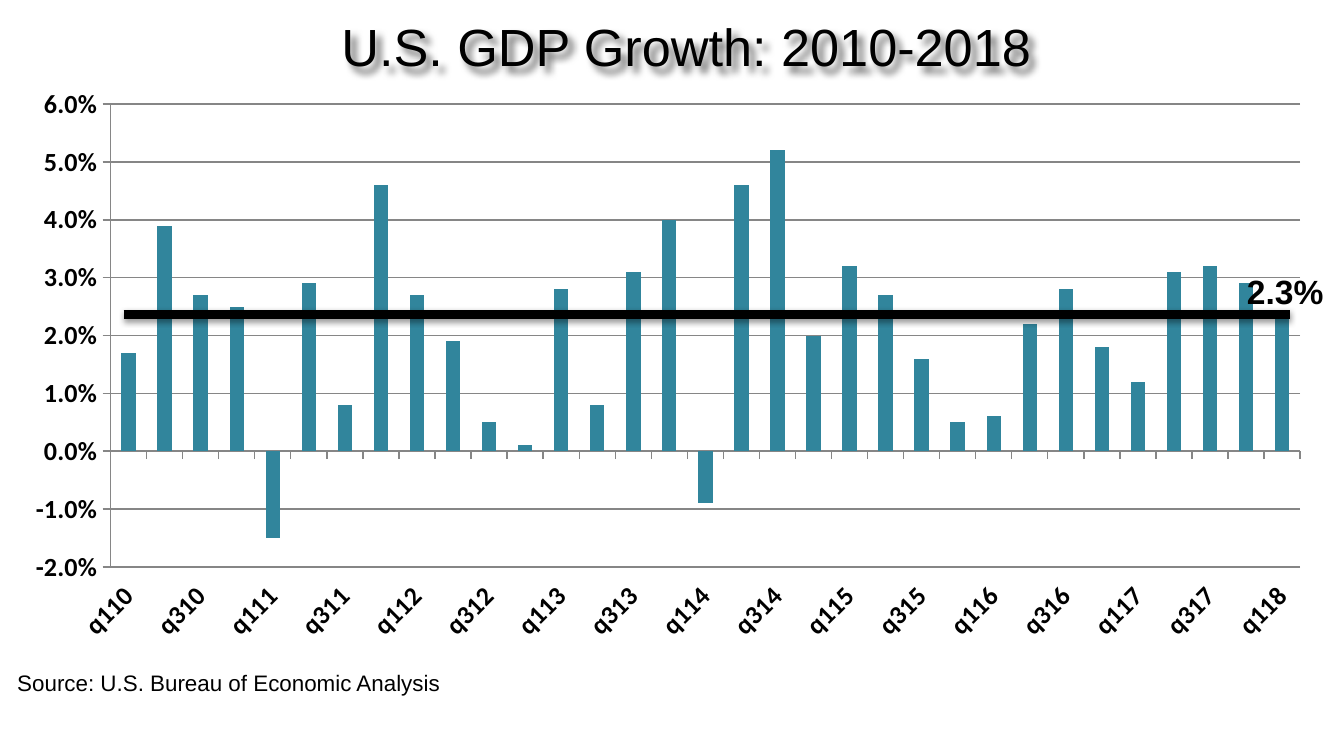
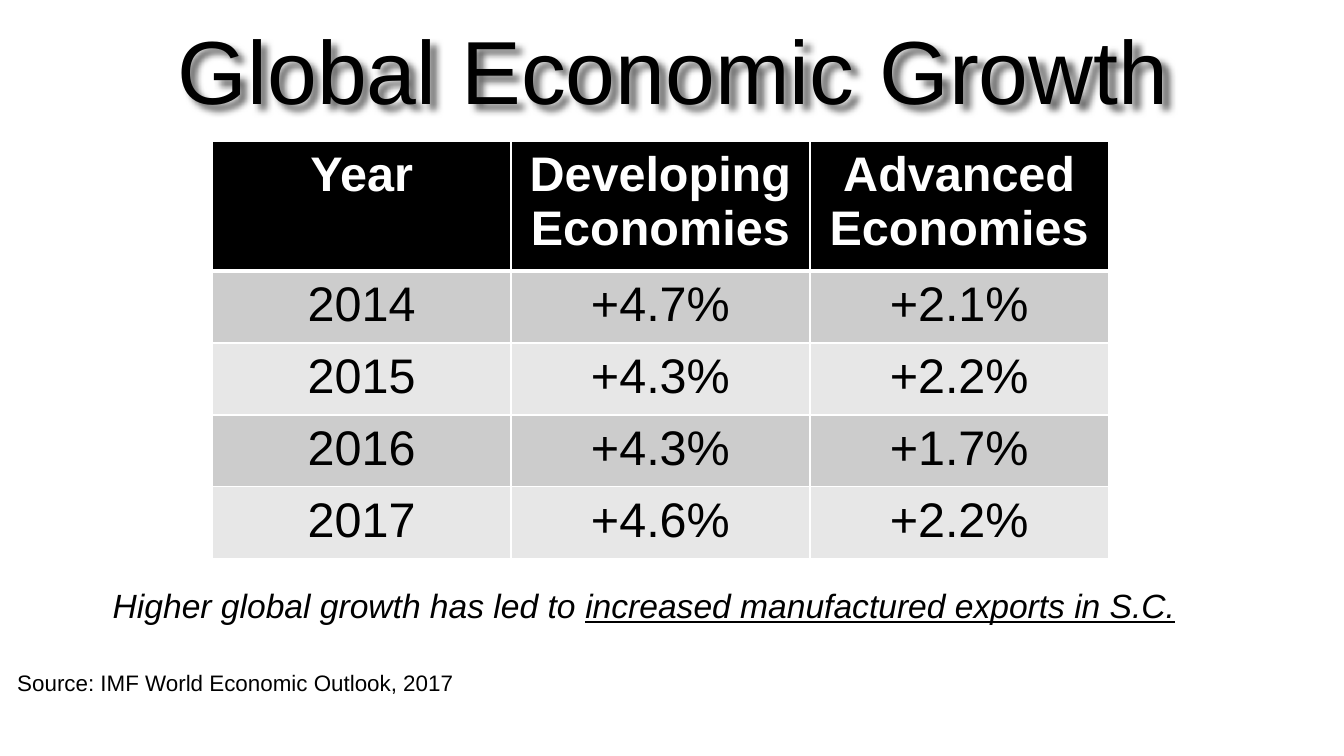
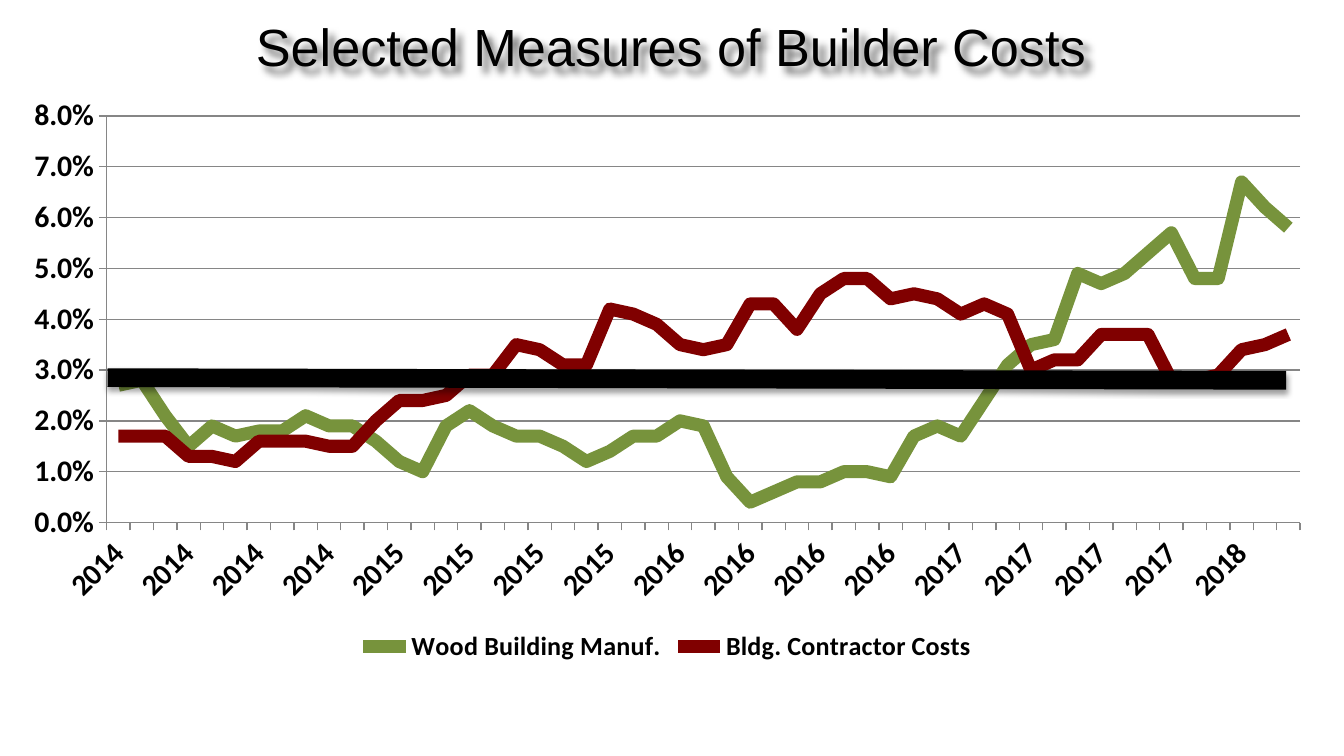
from lxml import etree
from pptx import Presentation
from pptx.chart.data import CategoryChartData
from pptx.dml.color import RGBColor
from pptx.enum.chart import XL_CHART_TYPE as ChartType
from pptx.enum.chart import XL_LEGEND_POSITION as LegendPosition
from pptx.enum.chart import XL_TICK_LABEL_POSITION as LabelPosition
from pptx.enum.chart import XL_TICK_MARK as TickMark
from pptx.enum.shapes import MSO_CONNECTOR as Connector
from pptx.enum.text import MSO_AUTO_SIZE as AutoSize
from pptx.enum.text import PP_ALIGN as Align
from pptx.oxml import parse_xml
from pptx.oxml.ns import nsdecls, qn
from pptx.util import Inches, Pt

BLACK = RGBColor(0x00, 0x00, 0x00)
WHITE = RGBColor(0xFF, 0xFF, 0xFF)
GRID_GRAY = RGBColor(0x86, 0x86, 0x86)
BAND_DARK = RGBColor(0xCC, 0xCC, 0xCC)
BAND_LIGHT = RGBColor(0xE7, 0xE7, 0xE7)
TEAL = RGBColor(0x31, 0x85, 0x9C)
GREEN = RGBColor(0x77, 0x93, 0x3C)
MAROON = RGBColor(0x80, 0x00, 0x00)
TEXT_FONT = "Arial"
CHART_FONT = "Calibri"

# Values in percent, one per quarter from q110
GDP_GROWTH = [
    1.7, 3.9, 2.7, 2.5, -1.5, 2.9, 0.8, 4.6, 2.7, 1.9, 0.5, 0.1, 2.8, 0.8, 3.1, 4.0, -0.9,
    4.6, 5.2, 2.0, 3.2, 2.7, 1.6, 0.5, 0.6, 2.2, 2.8, 1.8, 1.2, 3.1, 3.2, 2.9, 2.3]
# Values in percent, one per month from January 2014
WOOD_COSTS = [
    2.7, 2.8, 2.1, 1.5, 1.9, 1.7, 1.8, 1.8, 2.1, 1.9, 1.9, 1.6, 1.2, 1.0, 1.9, 2.2, 1.9,
    1.7, 1.7, 1.5, 1.2, 1.4, 1.7, 1.7, 2.0, 1.9, 0.9, 0.4, 0.6, 0.8, 0.8, 1.0, 1.0, 0.9,
    1.7, 1.9, 1.7, 2.4, 3.1, 3.5, 3.6, 4.9, 4.7, 4.9, 5.3, 5.7, 4.8, 4.8, 6.7, 6.2, 5.8]
CONTRACTOR_COSTS = [
    1.7, 1.7, 1.7, 1.3, 1.3, 1.2, 1.6, 1.6, 1.6, 1.5, 1.5, 2.0, 2.4, 2.4, 2.5, 2.9, 2.9,
    3.5, 3.4, 3.1, 3.1, 4.2, 4.1, 3.9, 3.5, 3.4, 3.5, 4.3, 4.3, 3.8, 4.5, 4.8, 4.8, 4.4,
    4.5, 4.4, 4.1, 4.3, 4.1, 3.0, 3.2, 3.2, 3.7, 3.7, 3.7, 2.8, 2.8, 2.9, 3.4, 3.5, 3.7]
GROWTH_ROWS = [
    ("Year", "Developing Economies", "Advanced Economies"),
    ("2014", "+4.7%", "+2.1%"),
    ("2015", "+4.3%", "+2.2%"),
    ("2016", "+4.3%", "+1.7%"),
    ("2017", "+4.6%", "+2.2%"),
]
HEADER_HEIGHT = 0.96


def add_shadow(shape, blur, distance, degrees, opacity):
    shape._element.spPr.append(parse_xml(
        f'<a:effectLst {nsdecls("a")}><a:outerShdw blurRad="{Pt(blur)}" dist="{Pt(distance)}" '
        f'dir="{degrees * 60000}" algn="tl" rotWithShape="0"><a:srgbClr val="{BLACK}">'
        f'<a:alpha val="{opacity * 1000}"/></a:srgbClr></a:outerShdw></a:effectLst>'))


def add_span(para, text, size, color=BLACK, bold=False, italic=False, underline=False):
    span = para.add_run()
    span.text = text
    font = span.font
    font.name, font.size, font.bold = TEXT_FONT, Pt(size), bold
    font.color.rgb = color
    if italic:
        font.italic = True
    if underline:
        font.underline = True


def add_text_box(page, box):
    """Add a wrapping text box that grows with its text."""
    shape = page.shapes.add_textbox(*map(Inches, box))
    shape.text_frame.word_wrap = True
    shape.text_frame.auto_size = AutoSize.SHAPE_TO_FIT_TEXT
    return shape


def add_title(page, box, text, size=28):
    shape = add_text_box(page, box)
    add_shadow(shape, 4, 4, 45, 60)
    para = shape.text_frame.paragraphs[0]
    para.alignment = Align.CENTER
    add_span(para, text, size)


def add_source(page, text):
    shape = add_text_box(page, (0.03, 4.93, 4.95, 0.3))
    add_span(shape.text_frame.paragraphs[0], text, 12)


def add_average_line(page, start, end, width):
    line = page.shapes.add_connector(Connector.STRAIGHT, *map(Inches, start + end))
    line.line.color.rgb = BLACK
    line.line.width = Pt(width)
    add_shadow(line, 3.1, 1.6, 90, 38)


def style_axis(axis, size):
    axis.major_tick_mark = TickMark.OUTSIDE
    axis.minor_tick_mark = TickMark.NONE
    axis.format.line.color.rgb = GRID_GRAY
    font = axis.tick_labels.font
    font.name, font.size, font.bold = CHART_FONT, Pt(size), True
    font.color.rgb = BLACK


def add_percent_chart(page, box, kind, categories, series, limits, label_size, label_step):
    data = CategoryChartData(number_format="0.0%")
    data.categories = categories
    for name, percents in series:
        data.add_series(name, [round(value / 100, 3) for value in percents])
    chart = page.shapes.add_chart(kind, *map(Inches, box), data).chart
    chart.has_title = False
    chart.has_legend = False
    chart.font.name, chart.font.size = CHART_FONT, Pt(10)
    chart.font.color.rgb = BLACK
    chart.plots[0].vary_by_categories = False

    values = chart.value_axis
    style_axis(values, label_size)
    values.minimum_scale, values.maximum_scale = limits
    values.major_unit = 0.01
    values.major_gridlines.format.line.color.rgb = GRID_GRAY
    values.tick_labels.number_format = "0.0%"
    values.tick_labels.number_format_is_linked = False

    # Slanted category labels, every label_step-th one shown
    names = chart.category_axis
    style_axis(names, label_size)
    names.tick_label_position = LabelPosition.LOW
    element = names._element
    element.find(qn("c:txPr")).find(qn("a:bodyPr")).set("rot", str(-45 * 60000))
    skip = etree.Element(qn("c:tickLblSkip"), val=str(label_step))
    element.find(qn("c:noMultiLvlLbl")).addprevious(skip)
    return chart


def add_growth_table(page, box):
    table = page.shapes.add_table(len(GROWTH_ROWS), 3, *map(Inches, box)).table
    body_height = (box[3] - HEADER_HEIGHT) / (len(GROWTH_ROWS) - 1)
    for column in table.columns:
        column.width = Inches(box[2] / 3)
    for index, texts in enumerate(GROWTH_ROWS):
        header = index == 0
        table.rows[index].height = Inches(HEADER_HEIGHT if header else body_height)
        band = BLACK if header else BAND_DARK if index % 2 else BAND_LIGHT
        for column, text in enumerate(texts):
            cell = table.cell(index, column)
            cell.fill.solid()
            cell.fill.fore_color.rgb = band
            para = cell.text_frame.paragraphs[0]
            para.alignment = Align.CENTER
            add_span(para, text, 26, WHITE if header else BLACK, bold=header)
            widths = {"L": 1, "R": 1, "T": 3 if index == 1 else 1, "B": 3 if header else 1}
            set_borders(cell, widths)


def set_borders(cell, widths):
    properties = cell._tc.get_or_add_tcPr()
    for place, (side, width) in enumerate(widths.items()):
        properties.insert(place, parse_xml(
            f'<a:ln{side} {nsdecls("a")} w="{Pt(width)}"><a:solidFill>'
            f'<a:srgbClr val="{WHITE}"/></a:solidFill></a:ln{side}>'))


def build_gdp_slide(page):
    quarters = [f"q{i % 4 + 1}{10 + i // 4}" for i in range(len(GDP_GROWTH))]
    chart = add_percent_chart(
        page, (0.07, 0.57, 9.8, 4.29), ChartType.COLUMN_CLUSTERED, quarters,
        [("Series 1", GDP_GROWTH)], (-0.02, 0.06), 14, 2)
    plot = chart.plots[0]
    plot.gap_width = 150
    columns = plot.series[0]
    columns.invert_if_negative = False
    columns.format.fill.solid()
    columns.format.fill.fore_color.rgb = TEAL

    add_title(page, (0.52, 0.06, 9.17, 0.57), "U.S. GDP Growth: 2010-2018")
    average = add_text_box(page, (9.18, 1.97, 1.06, 0.4))
    add_span(average.text_frame.paragraphs[0], "2.3%", 18, bold=True)
    add_source(page, "Source: U.S. Bureau of Economic Analysis")
    add_average_line(page, (0.92, 2.34), (9.6, 2.34), 5)


def build_global_slide(page):
    add_title(page, (1.08, 0.06, 7.86, 0.91), "Global Economic Growth", 48)
    add_growth_table(page, (1.58, 1.05, 6.67, 3.1))
    add_source(page, "Source: IMF World Economic Outlook, 2017")
    para = add_text_box(page, (0.74, 4.3, 8.45, 0.4)).text_frame.paragraphs[0]
    add_span(para, "Higher global growth has led to ", 18, italic=True)
    add_span(para, "increased manufactured exports in S.C.", 18, italic=True, underline=True)


def build_costs_slide(page):
    add_title(page, (0.23, 0.06, 9.52, 0.57), "Selected Measures of Builder Costs")
    years = [str(2014 + month // 12) for month in range(len(WOOD_COSTS))]
    chart = add_percent_chart(
        page, (0.06, 0.64, 9.81, 4.33), ChartType.LINE, years,
        [("Wood Building Manuf.", WOOD_COSTS), ("Bldg. Contractor Costs", CONTRACTOR_COSTS)],
        (0, 0.08), 16, 3)
    for series, color in zip(chart.plots[0].series, (GREEN, MAROON)):
        series.smooth = False
        series.format.line.color.rgb = color
        series.format.line.width = Pt(7)

    chart.has_legend = True
    legend = chart.legend
    legend.position = LegendPosition.BOTTOM
    legend.include_in_layout = False
    legend.font.name, legend.font.size, legend.font.bold = CHART_FONT, Pt(14), True
    legend.font.color.rgb = BLACK
    add_average_line(page, (0.8, 2.81), (9.57, 2.83), 10)


def main():
    deck = Presentation()
    # Widescreen, 16 to 9
    deck.slide_width, deck.slide_height = Inches(10), Inches(10 * 9 / 16)
    for build in (build_gdp_slide, build_global_slide, build_costs_slide):
        build(deck.slides.add_slide(deck.slide_layouts[6]))
    deck.save("out.pptx")


if __name__ == "__main__":
    main()
